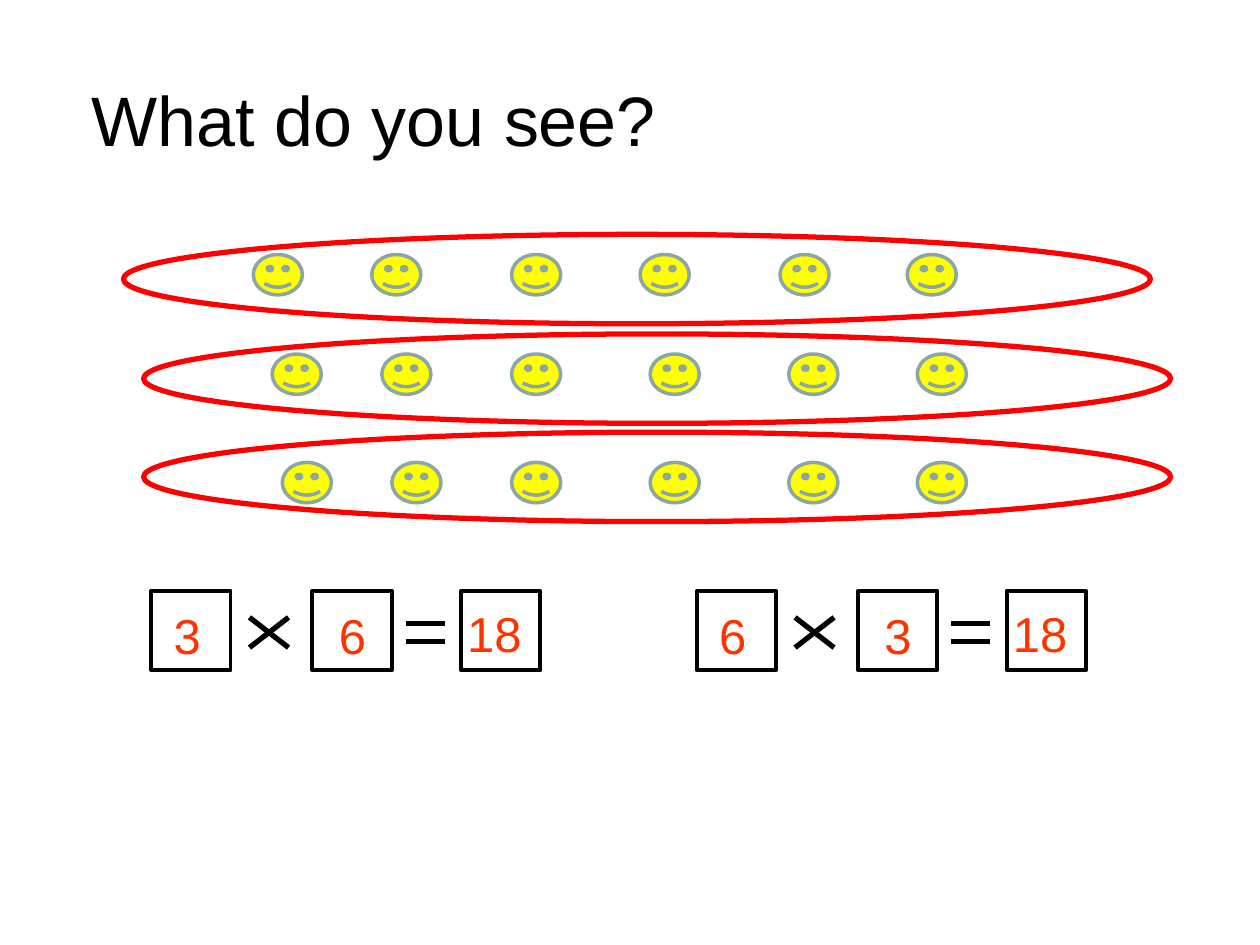
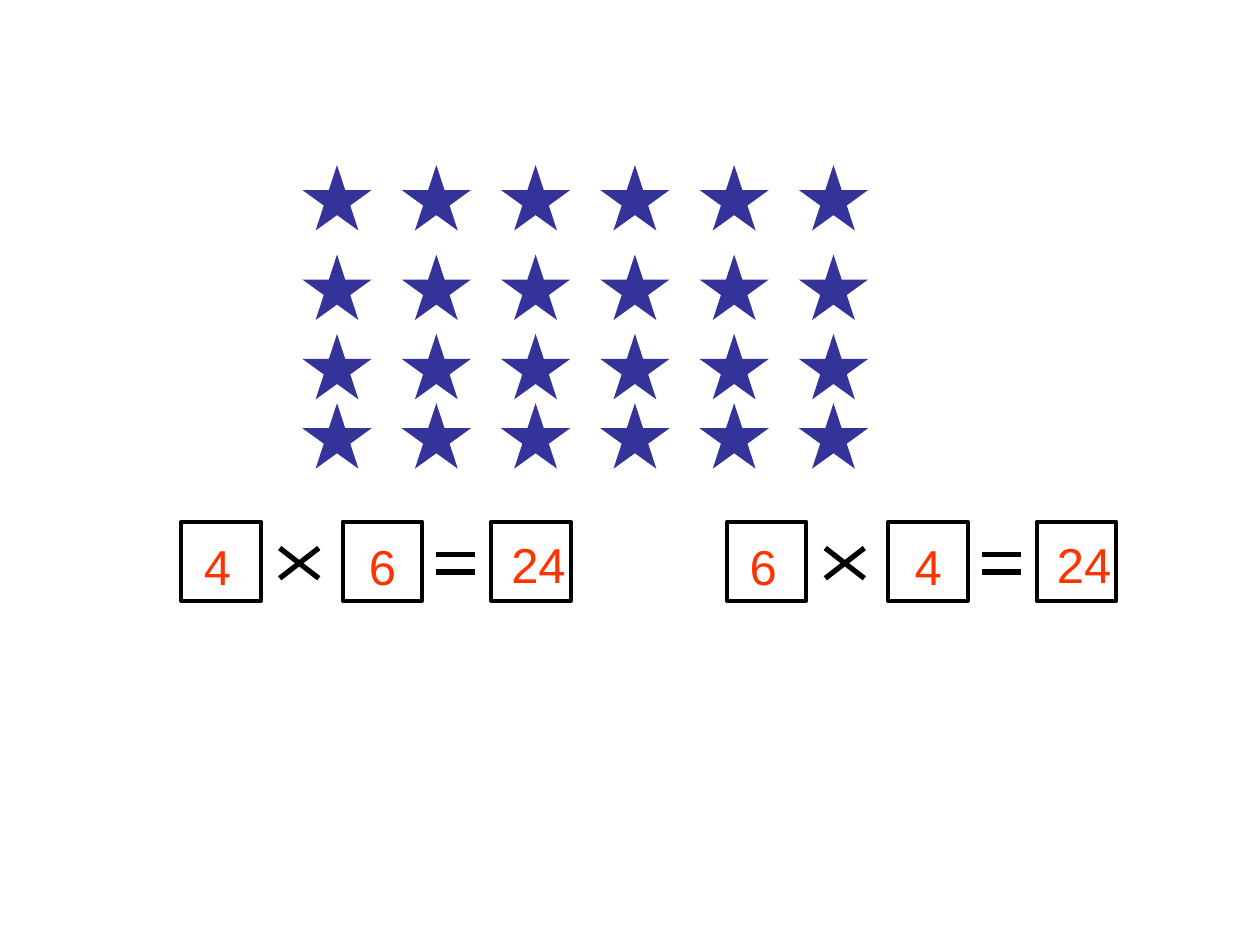
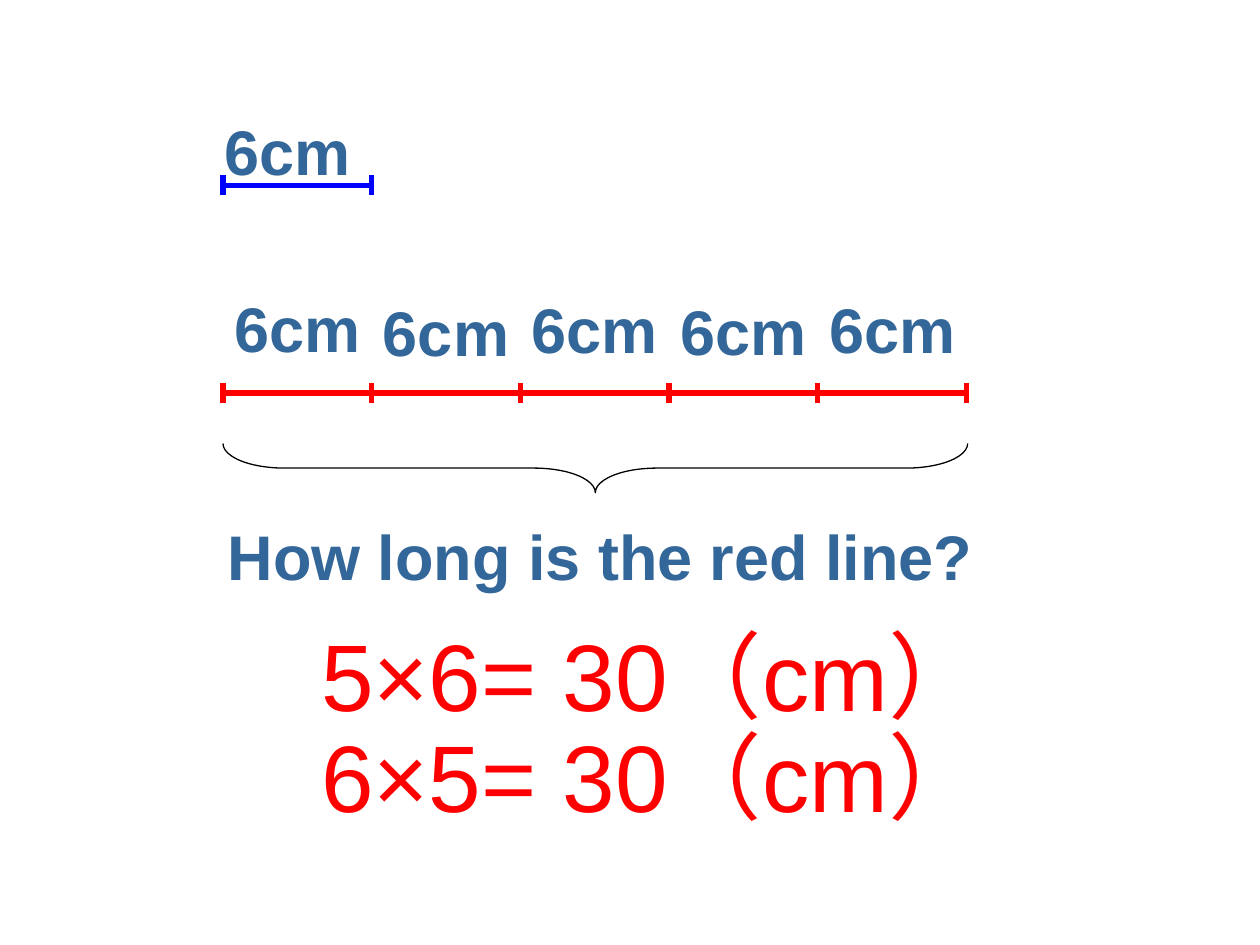
from typing import NamedTuple

from lxml import etree
from pptx import Presentation
from pptx.dml.color import RGBColor
from pptx.enum.shapes import MSO_CONNECTOR, MSO_SHAPE
from pptx.enum.text import MSO_ANCHOR, MSO_AUTO_SIZE, PP_ALIGN
from pptx.oxml.ns import qn
from pptx.util import Inches, Pt

RECT, OVAL = MSO_SHAPE.RECTANGLE, MSO_SHAPE.OVAL
FACE, STAR, BRACE = MSO_SHAPE.SMILEY_FACE, MSO_SHAPE.STAR_5_POINT, MSO_SHAPE.LEFT_BRACE
LINE = MSO_CONNECTOR.STRAIGHT
LEFT, CENTER = PP_ALIGN.LEFT, PP_ALIGN.CENTER
TOP, FIXED = MSO_ANCHOR.TOP, MSO_AUTO_SIZE.NONE

# Shared look
FONT = "Arial"
BLACK = RGBColor(0x00, 0x00, 0x00)
RED = RGBColor(0xFF, 0x00, 0x00)
ORANGE = RGBColor(0xFF, 0x33, 0x00)
YELLOW = RGBColor(0xFF, 0xFF, 0x00)
GREY = RGBColor(0x8A, 0xA6, 0xA8)
NAVY = RGBColor(0x33, 0x33, 0x99)
BLUE = RGBColor(0x00, 0x00, 0xFF)
STEEL = RGBColor(0x33, 0x66, 0x99)

WIDE, HIGH = 10, 7.5
TITLED, BLANK = 5, 6  # layout numbers


class Box(NamedTuple):
    x: float
    y: float
    w: float
    h: float


class Style(NamedTuple):
    size: float
    color: RGBColor
    bold: bool = False
    align: PP_ALIGN = LEFT


class Sum(NamedTuple):
    x: float
    y: float
    terms: tuple[str, str, str]
    indent: float = 0  # moves the answer to the right in its box


class Row(NamedTuple):
    loop: Box
    top: float
    cols: tuple[float, ...]


HEAD = Style(40, BLACK)
DIGIT = Style(28, ORANGE)
LABEL = Style(36, STEEL, True, CENTER)
RESULT = Style(54, RED)


def add_shape(slide, kind, box: Box, fill=None, line=None, width: float = 1):
    shape = slide.shapes.add_shape(kind, *map(Inches, box))
    shape.shadow.inherit = False
    if fill is None:
        shape.fill.background()
    else:
        shape.fill.solid()
        shape.fill.fore_color.rgb = fill
    if line is None:
        shape.line.fill.background()
    else:
        shape.line.color.rgb = line
        shape.line.width = Pt(width)
    return shape


def add_line(slide, x1: float, y1: float, x2: float, y2: float, color: RGBColor) -> None:
    line = slide.shapes.add_connector(LINE, *map(Inches, (x1, y1, x2, y2)))
    line.line.color.rgb = color
    line.line.width = Pt(3)
    etree.SubElement(line._element.spPr, qn("a:effectLst"))


def set_text(shape, text: str, style: Style, wrap: bool) -> None:
    frame = shape.text_frame
    frame.text = text
    frame.word_wrap = wrap
    frame.auto_size = FIXED
    frame.vertical_anchor = TOP
    para = frame.paragraphs[0]
    para.alignment = style.align
    font = para.runs[0].font
    font.name, font.size, font.bold = FONT, Pt(style.size), style.bold
    font.color.rgb = style.color


def add_text(slide, box: Box, text: str, style: Style, wrap: bool = False) -> None:
    set_text(slide.shapes.add_textbox(*map(Inches, box)), text, style, wrap)


def set_title(slide, box: Box, text: str, style: Style) -> None:
    title = slide.shapes.title
    title.left, title.top, title.width, title.height = map(Inches, box)
    set_text(title, text, style, True)


def add_sum(slide, item: Sum) -> None:
    """Draw three boxed numbers with a times sign and an equals sign."""
    x, y = item.x, item.y
    side = 0.63
    for step in (0, 1.28, 2.46):
        add_shape(slide, RECT, Box(x + step, y, side, side), line=BLACK, width=2.25)
    for drop in (0.26, 0.4):
        add_line(slide, x + 2.02, y + drop, x + 2.33, y + drop, BLACK)
    for start, end in ((0.45, 0.21), (0.21, 0.45)):
        add_line(slide, x + 0.78, y + start, x + 1.09, y + end, BLACK)
    spots = ((0.08, 0.07), (1.39, 0.07), (2.41 + item.indent, 0.05))
    for term, (dx, dy) in zip(item.terms, spots):
        width = 0.2 + 0.22 * len(term)
        add_text(slide, Box(x + dx, y + dy, width, 0.57), term, DIGIT)


def add_scale(slide, x: float, y: float, step: float, count: int, color: RGBColor) -> None:
    """Draw a line of equal lengths with a tick at each end of a length."""
    add_line(slide, x, y, x + count * step, y, color)
    for i in range(count + 1):
        add_line(slide, x + i * step, y - 0.08, x + i * step, y + 0.08, color)


def draw_faces(slide) -> None:
    set_title(slide, Box(0.63, 0.56, 8.43, 0.77), "What do you see?", HEAD)
    loop_w, loop_h = 8.15, 0.71
    rows = (
        Row(Box(0.98, 1.86, loop_w, loop_h), 2.02, (2.01, 2.95, 4.06, 5.08, 6.19, 7.2)),
        Row(Box(1.14, 2.65, loop_w, loop_h), 2.81, (2.16, 3.03, 4.06, 5.16, 6.26, 7.28)),
        Row(Box(1.14, 3.43, loop_w, loop_h), 3.67, (2.24, 3.11, 4.06, 5.16, 6.26, 7.28)),
    )
    for row in rows:
        add_shape(slide, OVAL, row.loop, line=RED, width=3)
        for x in row.cols:
            add_shape(slide, FACE, Box(x, row.top, 0.39, 0.32), YELLOW, GREY, 2)
    add_sum(slide, Sum(1.2, 4.69, ("3", "6", "18")))
    add_sum(slide, Sum(5.53, 4.69, ("6", "3", "18")))


def draw_stars(slide) -> None:
    left, pitch, count = 2.4, 3.94 / 5, 6
    for top in (1.31, 2.02, 2.65, 3.2):
        for col in range(count):
            add_shape(slide, STAR, Box(left + col * pitch, top, 0.55, 0.52), NAVY)
    add_sum(slide, Sum(1.44, 4.14, ("4", "6", "24"), 0.11))
    add_sum(slide, Sum(5.77, 4.14, ("6", "4", "24"), 0.11))


def draw_scales(slide) -> None:
    left, step, unit = 1.77, 1.18, "6cm"
    # Unit length above, five of them below
    add_scale(slide, left, 1.47, step, 1, BLUE)
    add_text(slide, Box(left, 0.84, 1.02, 0.5), unit, LABEL)
    tops = (2.25, 2.28, 2.26, 2.27, 2.26)
    add_scale(slide, left, 3.12, step, len(tops), RED)
    for i, top in enumerate(tops):
        add_text(slide, Box(left + 0.08 + i * step, top, 1.02, 0.5), unit, LABEL)
    # Brace, question and answers
    brace = add_shape(slide, BRACE, Box(4.53, 0.76, 0.39, 5.91), line=BLACK, width=0.75)
    brace.rotation = 270
    brace.adjustments[0], brace.adjustments[1] = 1.25, 0.5
    set_title(slide, Box(1.5, 4.06, 6.53, 0.7), "How long is the red line?", LABEL)
    for top, text in ((4.85, "5×6= 30（cm）"), (5.65, "6×5= 30（cm）")):
        add_text(slide, Box(2.45, top, 7.27, 1.01), text, RESULT, True)


def main() -> None:
    deck = Presentation()
    deck.slide_width, deck.slide_height = Inches(WIDE), Inches(HIGH)
    pages = ((TITLED, draw_faces), (BLANK, draw_stars), (TITLED, draw_scales))
    for layout, draw in pages:
        draw(deck.slides.add_slide(deck.slide_layouts[layout]))
    deck.save("out.pptx")


if __name__ == "__main__":
    main()
